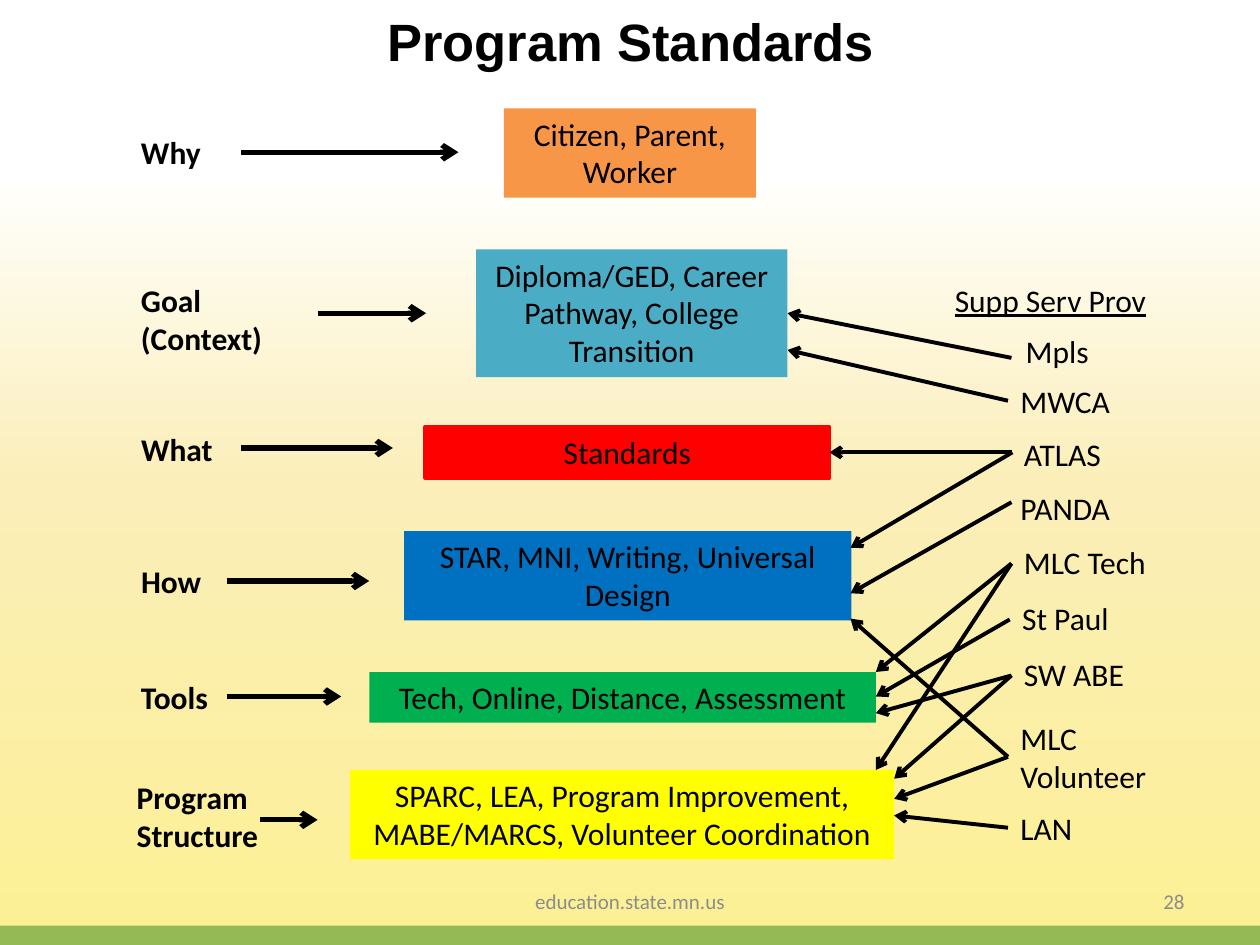
from pptx import Presentation
from pptx.dml.color import RGBColor
from pptx.enum.shapes import MSO_CONNECTOR, MSO_SHAPE
from pptx.enum.text import MSO_ANCHOR, PP_ALIGN
from pptx.oxml.ns import qn
from pptx.util import Pt
from lxml.etree import SubElement

BLACK = RGBColor(0, 0, 0)
GRAY = RGBColor(0x8C, 0x8C, 0x8C)
WHITE = RGBColor(0xFF, 0xFF, 0xFF)
CREAM = RGBColor(0xFB, 0xEE, 0xB9)
PALE_YELLOW = RGBColor(0xFC, 0xF0, 0x95)
FOOTER_GREEN = RGBColor(0x94, 0xBA, 0x56)
ORANGE = RGBColor(0xF7, 0x96, 0x46)
TEAL = RGBColor(0x4B, 0xAC, 0xC6)
RED = RGBColor(0xFF, 0, 0)
BLUE = RGBColor(0, 0x70, 0xC0)
GREEN = RGBColor(0, 0xB0, 0x50)
YELLOW = RGBColor(0xFF, 0xFF, 0)

PAGE_WIDTH, PAGE_HEIGHT = 720, 540
LINE_HEIGHT = 29

LEVELS = [
    ("Why", (73.5, 72.5, 72), (138, 262, 87), "Citizen, Parent, Worker", (288, 62, 144, 51), ORANGE),
    ("Goal (Context)", (73.5, 157, 86), (181.5, 243.5, 179), "Diploma/GED, Career Pathway, College Transition",
     (272, 142.5, 178, 73), TEAL),
    ("What", (73.5, 242, 90), (138, 224.5, 256), "Standards", (243, 244, 231, 29), RED),
    ("How", (73.5, 317.5, 90), (130, 211, 332), "STAR, MNI, Writing, Universal Design",
     (231, 303.5, 255.5, 51), BLUE),
    ("Tools", (73.5, 384, 75), (130, 195, 398), "Tech, Online, Distance, Assessment",
     (211, 384, 289.5, 29), GREEN),
    ("Program Structure", (71, 441, 87), (148.5, 181.5, 468.5),
     "SPARC, LEA, Program Improvement, MABE/MARCS, Volunteer Coordination", (200, 440, 311, 51), YELLOW),
]

PROVIDERS = [
    ("Mpls", (579, 186, 63), (578, 204.5), [(450, 179)]),
    ("MWCA", (576, 214.5, 66), (576, 229), [(450, 200)]),
    ("ATLAS", (578, 245, 76), (578.5, 258.5), [(474, 258.5), (486, 313)]),
    ("PANDA", (576, 276, 66), (578, 287), [(486, 339)]),
    ("MLC Tech", (578, 306.5, 94), (578, 322), [(500.5, 384), (500.5, 440)]),
    ("St Paul", (577, 339, 65), (577, 354), [(500.5, 398)]),
    ("SW ABE", (578, 371, 91), (578, 386), [(500.5, 407.5), (511, 445)]),
    ("MLC Volunteer", (576, 407.5, 93), (576, 432.5), [(511, 456.5), (486, 353.5)]),
    ("LAN", (576, 458.5, 66), (576, 473), [(511, 466)]),
]


class Diagram:
    base = {"name": "Calibri", "size": Pt(18), "bold": False, "underline": False}

    def __init__(self, slide):
        self.shapes = slide.shapes

    def put_text(self, shape, text, align, color=BLACK, anchor=MSO_ANCHOR.TOP, **formats):
        frame = shape.text_frame
        frame.word_wrap = True
        frame.vertical_anchor = anchor
        paragraph = frame.paragraphs[0]
        paragraph.alignment = align
        run = paragraph.add_run()
        run.text = text
        for key, value in {**self.base, **formats}.items():
            setattr(run.font, key, value)
        run.font.color.rgb = color

    def label(self, text, place, align=PP_ALIGN.LEFT, **formats):
        self.put_text(self.shapes.add_textbox(*map(Pt, place)), text, align, **formats)

    def panel(self, place, color, border=None):
        panel = self.shapes.add_shape(MSO_SHAPE.RECTANGLE, *map(Pt, place))
        panel.shadow.inherit = False
        panel.fill.solid()
        panel.fill.fore_color.rgb = color
        if border:
            panel.line.color.rgb = color
            panel.line.width = Pt(border)
        else:
            panel.line.fill.background()
        return panel

    def box(self, text, place, color, border=None):
        self.put_text(self.panel(place, color, border), text, PP_ALIGN.CENTER)

    def backdrop(self, stops):
        panel = self.panel((0, 0, PAGE_WIDTH, PAGE_HEIGHT), WHITE)
        panel.fill.gradient()
        panel.fill.gradient_angle = 270
        stop_list = next(panel.element.iter(qn("a:gsLst")))
        for stop in list(stop_list):
            stop_list.remove(stop)
        for percent, color in stops:
            stop = SubElement(stop_list, qn("a:gs"), pos=str(percent * 1000))
            SubElement(stop, qn("a:srgbClr"), val=str(color))

    def arrow(self, start, end, weight):
        arrow = self.shapes.add_connector(MSO_CONNECTOR.STRAIGHT, *map(Pt, (*start, *end)))
        arrow.line.width = Pt(weight)
        arrow.line.color.rgb = BLACK
        SubElement(arrow.get_or_add_ln(), qn("a:tailEnd"), type="arrow")
        SubElement(arrow.element.spPr, qn("a:effectLst"))


def main():
    deck = Presentation()
    deck.slide_width, deck.slide_height = Pt(PAGE_WIDTH), Pt(PAGE_HEIGHT)
    diagram = Diagram(deck.slides.add_slide(deck.slide_layouts[6]))

    diagram.backdrop([(0, WHITE), (18, WHITE), (51, CREAM), (100, PALE_YELLOW)])
    diagram.panel((0, 529, PAGE_WIDTH, 11), FOOTER_GREEN)
    footer = {"size": Pt(12), "color": GRAY, "anchor": MSO_ANCHOR.MIDDLE}
    diagram.label("education.state.mn.us", (246, 500.5, 228, LINE_HEIGHT), PP_ALIGN.CENTER, **footer)
    diagram.label("28", (516, 500.5, 168, LINE_HEIGHT), PP_ALIGN.RIGHT, **footer)
    diagram.label("Program Standards", (0, -1, 721, 48), PP_ALIGN.CENTER,
                  name="Arial", size=Pt(30), bold=True, anchor=MSO_ANCHOR.MIDDLE)

    for question, spot, (left, right, height), answer, place, color in LEVELS:
        diagram.label(question, (*spot, LINE_HEIGHT), bold=True)
        diagram.arrow((left, height), (right, height), 3)
        diagram.box(answer, place, color, 2.25 if answer == "Standards" else None)

    diagram.label("Supp Serv Prov", (538.5, 157, 126, LINE_HEIGHT), underline=True)
    for provider, spot, start, targets in PROVIDERS:
        diagram.label(provider, (*spot, LINE_HEIGHT))
        for target in targets:
            diagram.arrow(start, target, 2.25)

    deck.save("out.pptx")


if __name__ == "__main__":
    main()
